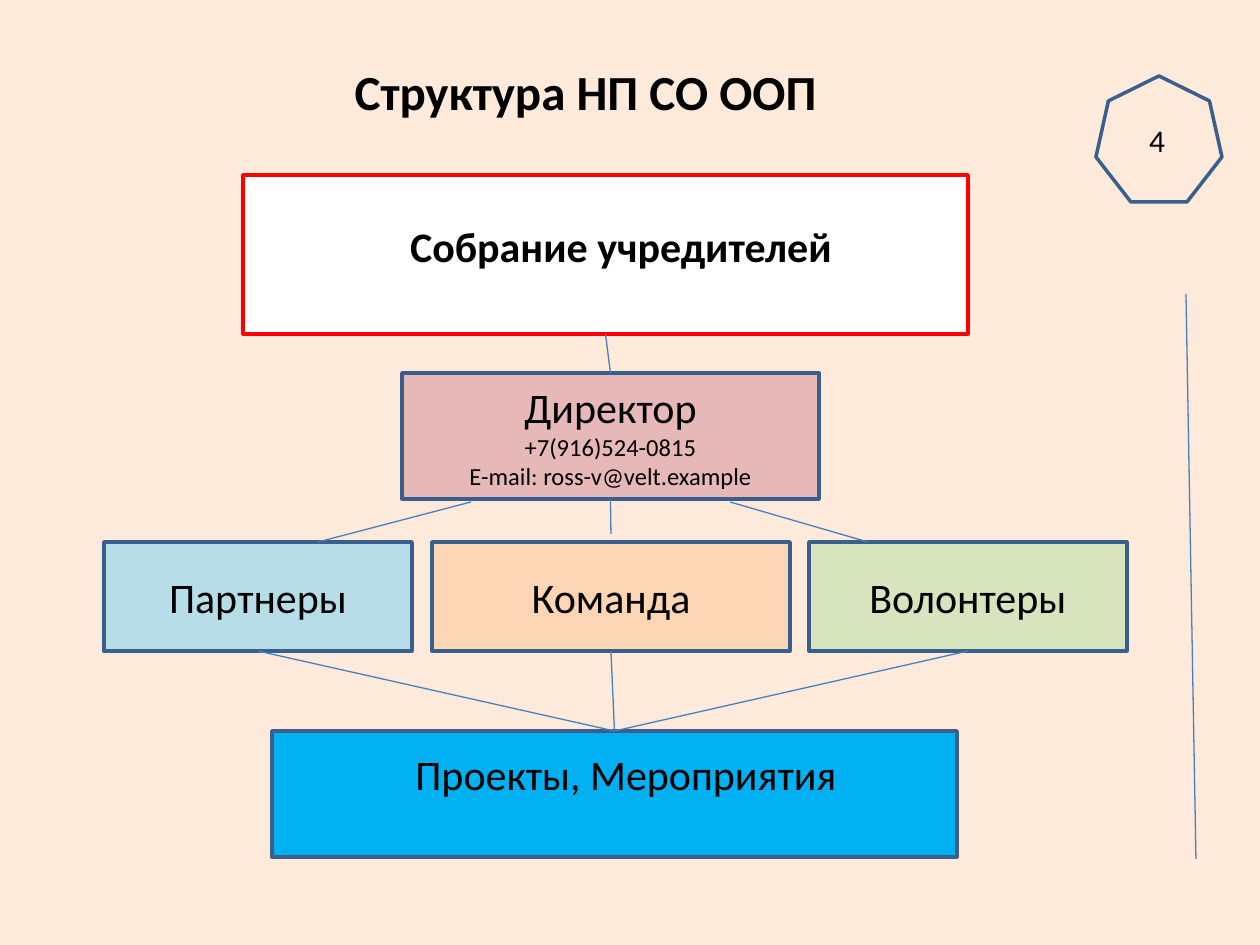
"""Build the organisation structure slide."""
from lxml import etree
from pptx import Presentation
from pptx.dml.color import RGBColor
from pptx.enum.shapes import MSO_CONNECTOR, MSO_SHAPE
from pptx.enum.text import MSO_ANCHOR, PP_ALIGN
from pptx.oxml.ns import qn
from pptx.util import Pt

LINE = MSO_CONNECTOR.STRAIGHT
RECT, SEVEN = MSO_SHAPE.RECTANGLE, MSO_SHAPE.HEPTAGON
MID, TOP, CENTER = MSO_ANCHOR.MIDDLE, MSO_ANCHOR.TOP, PP_ALIGN.CENTER
UP, DOWN = 0, 2
PX = 914400 / 126

BLACK = RGBColor(0, 0, 0)
WHITE = RGBColor(255, 255, 255)
RED = RGBColor(255, 0, 0)
NAVY = RGBColor(0x3A, 0x5F, 0x8C)
BLUE = RGBColor(0x4B, 0x7E, 0xBC)
SKY = RGBColor(0x00, 0xB0, 0xF0)
ROSE = RGBColor(0xE6, 0xB9, 0xB8)
AQUA = RGBColor(0xB7, 0xDE, 0xE8)
PEACH = RGBColor(0xFC, 0xD5, 0xB5)
GREEN = RGBColor(0xD7, 0xE4, 0xBD)
CREAM = RGBColor(0xFD, 0xEA, 0xDA)


def scale(*sizes):
    return [round(size * PX) for size in sizes]


def write(shape, rows, anchor=MID, bold=False):
    frame = shape.text_frame
    frame.word_wrap = True
    frame.vertical_anchor = anchor
    frame.text = "\n".join(text for text, size in rows)
    for para, (text, size) in zip(frame.paragraphs, rows):
        para.alignment = CENTER
        style = {"name": "Calibri", "size": Pt(size), "bold": bold}
        for key, value in style.items():
            setattr(para.runs[0].font, key, value)
        para.runs[0].font.color.rgb = BLACK


deck = Presentation()
deck.slide_width, deck.slide_height = scale(1260, 945)
slide = deck.slides.add_slide(deck.slide_layouts[5])
slide.background.fill.solid()
slide.background.fill.fore_color.rgb = CREAM
shapes = slide.shapes

title = shapes.title
spot = dict(zip(("left", "top", "width", "height"), scale(164, 55, 843, 72)))
for key, value in spot.items():
    setattr(title, key, value)
write(title, [("Структура НП СО ООП", 28)], TOP, True)

boxes = {}
for name, kind, place, fill, edge, rows in [
    ("badge", SEVEN, (1096, 76, 126, 126), None, NAVY, []),
    ("board", RECT, (243, 175, 725, 159), WHITE, RED, []),
    ("head", RECT, (402, 373, 417, 126), ROSE, NAVY,
     [("Директор", 24), ("+7(916)524-0815", 14),
      ("E-mail: ross-v@velt.example", 14)]),
    ("partners", RECT, (104, 542, 308, 109), AQUA, NAVY, [("Партнеры", 24)]),
    ("team", RECT, (432, 542, 358, 109), PEACH, NAVY, [("Команда", 24)]),
    ("helpers", RECT, (809, 542, 318, 109), GREEN, NAVY, [("Волонтеры", 24)]),
    ("projects", RECT, (272, 731, 685, 126), SKY, NAVY, []),
]:
    box = boxes[name] = shapes.add_shape(kind, *scale(*place))
    box.shadow.inherit = False
    box.line.color.rgb = edge
    box.line.width = Pt(2)
    if fill is None:
        box.fill.background()
    else:
        box.fill.solid()
        box.fill.fore_color.rgb = fill
    if rows:
        write(box, rows)

for text, size, place, anchor, bold in [
    ("4", 18, (1136, 115, 42, 50), TOP, False),
    ("Собрание учредителей", 24, (333, 214, 576, 63), MID, True),
    ("Проекты, Мероприятия", 24, (333, 742, 586, 64), MID, False),
]:
    write(shapes.add_textbox(*scale(*place)), [(text, size)], anchor, bold)

for ends, start, stop in [
    ((1196, 859, 1186, 294), None, None),
    ((605, 334, 611, 373), "board", "head"),
    ((471, 502, 318, 542), None, None),
    ((611, 499, 611, 534), "head", None),
    ((730, 502, 868, 542), None, None),
    ((258, 651, 615, 731), "partners", "projects"),
    ((611, 651, 615, 731), "team", "projects"),
    ((968, 651, 615, 731), "helpers", "projects"),
]:
    link = shapes.add_connector(LINE, *scale(*ends))
    link.line.color.rgb = BLUE
    link.line.width = Pt(0.75)
    etree.SubElement(link._element.spPr, qn("a:effectLst"))
    if start:
        link.begin_connect(boxes[start], DOWN)
    if stop:
        link.end_connect(boxes[stop], UP)

deck.save("out.pptx")
